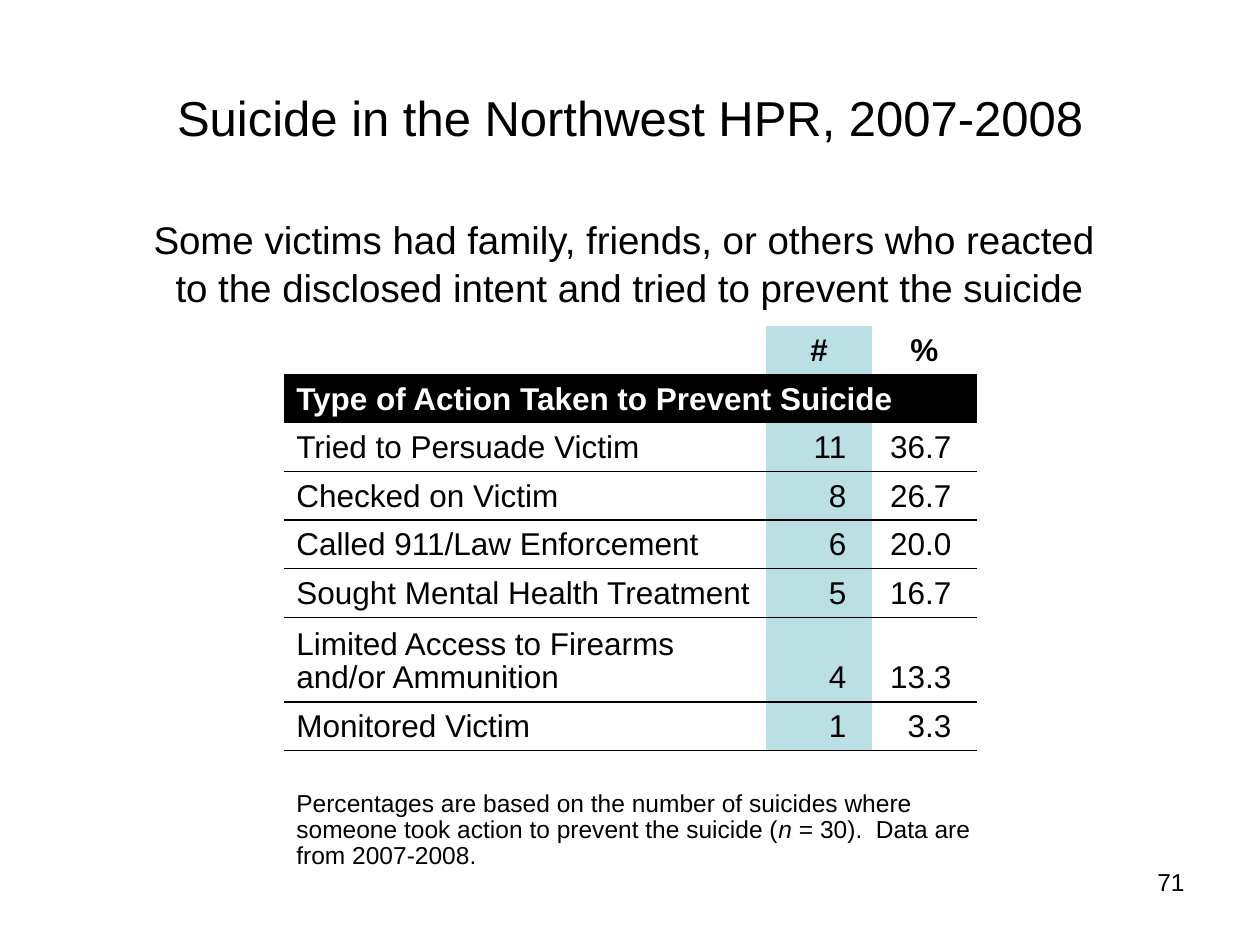
import pptx
import pptx.util
import pptx.dml.color
import pptx.enum.text
import pptx.oxml
import pptx.oxml.ns
from pptx.util import Cm

ALIGN = pptx.enum.text.PP_ALIGN
ANCHOR = pptx.enum.text.MSO_ANCHOR
BLACK, WHITE, TEAL = "000000", "FFFFFF", "BBE0E3"
ROWS = [
    ("Tried to Persuade Victim", "11", "36.7"),
    ("Checked on Victim", "8", "26.7"),
    ("Called 911/Law Enforcement", "6", "20.0"),
    ("Sought Mental Health Treatment", "5", "16.7"),
    ("Limited Access to Firearms and/or Ammunition", "4", "13.3"),
    ("Monitored Victim", "1", "3.3"),
]
NOTE = [
    ("Percentages are based on the number of suicides where someone took "
     "action to prevent the suicide (", False),
    ("n ", True),
    ("= 30).  Data are from 2007-2008.", False),
]


def color(code):
    return pptx.dml.color.RGBColor.from_string(code)


def write(para, text, size=18, code=BLACK, bold=False, align=ALIGN.LEFT,
          lead=None, before=None):
    para.alignment = align
    para.line_spacing = lead
    if before is not None:
        para.space_before = pptx.util.Pt(before)
    parts = [(text, False)] if isinstance(text, str) else text
    for words, slant in parts:
        run = para.add_run()
        run.text = words
        font = run.font
        font.name = "Arial"
        font.size = pptx.util.Pt(size)
        font.bold = bold
        font.italic = slant
        font.color.rgb = color(code)


def add_text(slide, place, lines, **form):
    frame = slide.shapes.add_textbox(*map(Cm, place)).text_frame
    frame.word_wrap = True
    for i, line in enumerate(lines):
        para = frame.add_paragraph() if i else frame.paragraphs[0]
        write(para, line, **form)


def add_title(slide, text):
    title = slide.shapes.title
    title.left, title.top = Cm(1.27), Cm(0.76)
    title.width, title.height = Cm(22.86), Cm(3.18)
    title.text_frame.vertical_anchor = ANCHOR.MIDDLE
    write(title.text_frame.paragraphs[0], text, size=28, align=ALIGN.CENTER)


def set_cell(cell, text="", fill=None, right=0.25, **form):
    cell.vertical_anchor = ANCHOR.BOTTOM
    cell.margin_right = Cm(right)
    if fill:
        cell.fill.solid()
        cell.fill.fore_color.rgb = color(fill)
    else:
        cell.fill.background()
    para = cell.text_frame.paragraphs[0]
    if text:
        write(para, text, lead=0.95, **form)
    else:
        mark = pptx.oxml.ns.nsdecls("a")
        para._p.append(pptx.oxml.parse_xml(f'<a:endParaRPr {mark} sz="800"/>'))


def rule(cell, side):
    mark = pptx.oxml.ns.nsdecls("a")
    line = pptx.oxml.parse_xml(
        f'<a:{side} {mark} w="12700"><a:solidFill><a:srgbClr val="{BLACK}"/>'
        f'</a:solidFill></a:{side}>')
    cell._tc.get_or_add_tcPr().insert(0, line)


def set_band(table, row, text, **form):
    cell = table.cell(row, 0)
    cell.merge(table.cell(row, 2))
    set_cell(cell, text, right=0, **form)


def add_grid(slide):
    high = [0.93] * 6 + [1.61, 0.93, 0.58, 1.86]
    wide = [9.73, 2.12, 2.12]
    frame = slide.shapes.add_table(len(high), len(wide), Cm(5.72), Cm(6.57),
                                   Cm(sum(wide)), Cm(sum(high)))
    table = frame.table
    table.first_row = table.horz_banding = False
    style = table._tbl.tblPr.find(pptx.oxml.ns.qn("a:tableStyleId"))
    style.text = "{2D5ABB26-0587-4C30-8999-92F81FD0307C}"
    for col, size in zip(table.columns, wide):
        col.width = Cm(size)
    for row, size in zip(table.rows, high):
        row.height = Cm(size)

    for i, (text, fill) in enumerate([("", None), ("#", TEAL), ("%", None)]):
        set_cell(table.cell(0, i), text, fill, bold=True, align=ALIGN.CENTER)
        set_cell(table.cell(8, i))
    set_band(table, 1, "Type of Action Taken to Prevent Suicide",
             fill=BLACK, code=WHITE, bold=True)
    set_band(table, 9, NOTE, size=14)

    for r, (label, count, share) in enumerate(ROWS, 2):
        set_cell(table.cell(r, 0), label)
        set_cell(table.cell(r, 1), count, TEAL, 0.51, align=ALIGN.RIGHT)
        set_cell(table.cell(r, 2), share, None, 0.51, align=ALIGN.RIGHT)
        for c in range(3):
            if r > 2:
                rule(table.cell(r, c), "lnT")
            if r < 7:
                rule(table.cell(r, c), "lnB")


def main():
    deck = pptx.Presentation()
    deck.slide_width, deck.slide_height = Cm(25.4), Cm(19.05)
    slide = deck.slides.add_slide(deck.slide_layouts[5])
    add_text(slide, (18.21, 17.35, 5.92, 1.32), ["71"], size=14,
             align=ALIGN.RIGHT)
    add_title(slide, "Suicide in the Northwest HPR, 2007-2008")
    add_grid(slide)
    add_text(slide, (2.11, 4.24, 21.16, 2.11), [
        "Some victims had family, friends, or others who reacted ",
        "to the disclosed intent and tried to prevent the suicide",
    ], size=22, align=ALIGN.CENTER, before=1)
    deck.save("out.pptx")


if __name__ == "__main__":
    main()
